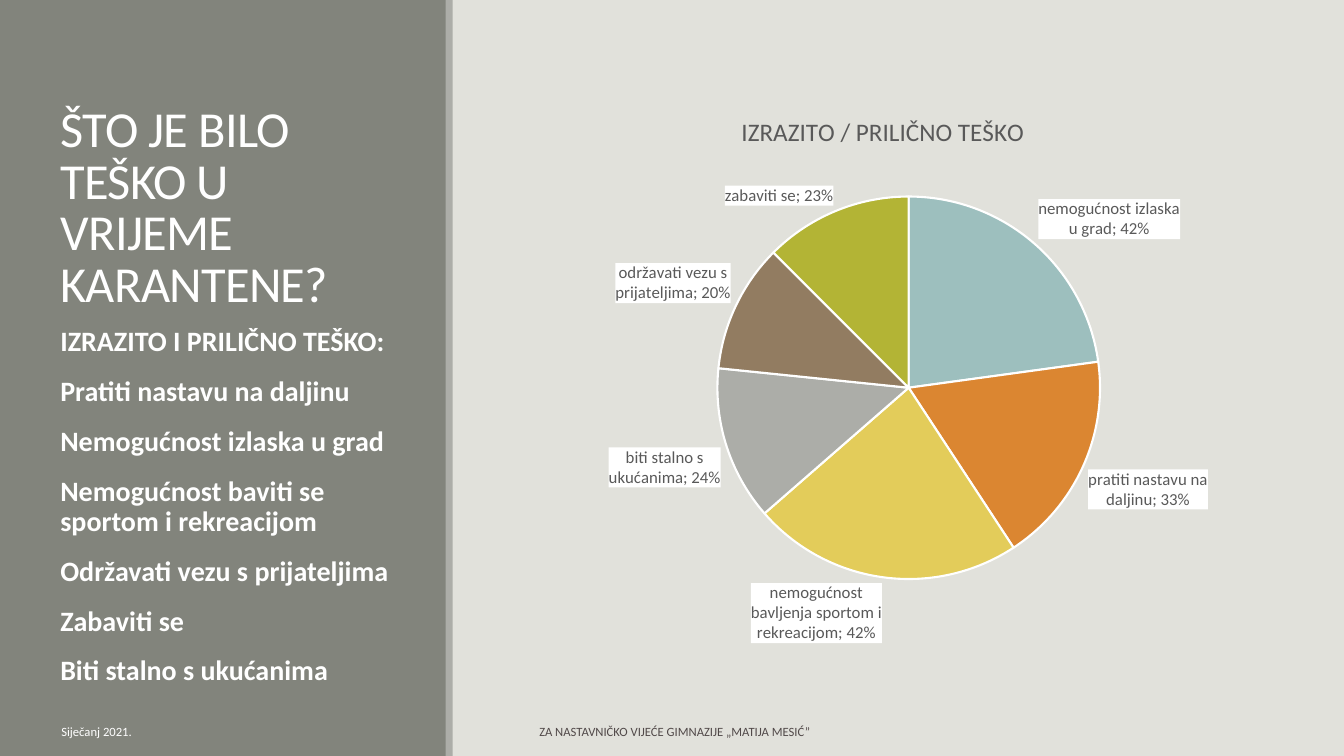
from dataclasses import dataclass

from lxml import etree
from pptx import Presentation
from pptx.chart.data import CategoryChartData
from pptx.dml.color import RGBColor
from pptx.enum import chart as ch, shapes, text
from pptx.oxml import ns
from pptx.util import Inches, Pt


@dataclass(frozen=True)
class Theme:
    font: str = "Calibri"
    back: str = "E1E1DB"
    panel: str = "82847C"
    strip: str = "ACADA8"
    white: str = "FFFFFF"
    label: str = "595959"
    foot: str = "514949"
    slices: tuple = ("9DBFBE", "DB8631", "E3CC5A", "ACADA8", "927C61", "B3B435")
    head: int = 36
    body: int = 20
    name: int = 18
    tag: int = 12
    note: int = 9


THEME = Theme()
TITLE = "ŠTO JE BILO TEŠKO U VRIJEME KARANTENE?"
POINTS = [
    "IZRAZITO I PRILIČNO TEŠKO:",
    "Pratiti nastavu na daljinu",
    "Nemogućnost izlaska u grad",
    "Nemogućnost baviti se sportom i rekreacijom",
    "Održavati vezu s prijateljima",
    "Zabaviti se",
    "Biti stalno s ukućanima",
]
SHARES = {
    "nemogućnost izlaska u grad": 0.42,
    "pratiti nastavu na daljinu": 0.33,
    "nemogućnost bavljenja sportom i rekreacijom": 0.42,
    "biti stalno s ukućanima": 0.24,
    "održavati vezu s prijateljima": 0.2,
    "zabaviti se": 0.23,
}


def rgb(code):
    return RGBColor.from_string(code)


def style(font, size, color, bold=False):
    font.name, font.size, font.bold = THEME.font, Pt(size), bold
    font.color.rgb = rgb(color)


def write(frame, lines, size, color, bold=False, anchor=text.MSO_ANCHOR.TOP):
    frame.word_wrap = True
    frame.auto_size = text.MSO_AUTO_SIZE.NONE
    frame.vertical_anchor = anchor
    frame.text = "\n".join(lines)
    for para in frame.paragraphs:
        para.alignment = text.PP_ALIGN.LEFT
        style(para.runs[0].font, size, color, bold)


def add_bar(slide, box, color):
    bar = slide.shapes.add_shape(shapes.MSO_SHAPE.RECTANGLE, *map(Inches, box))
    bar.shadow.inherit = False
    bar.fill.solid()
    bar.fill.fore_color.rgb = rgb(color)
    bar.line.fill.background()


def add_panel(slide, left, top, width, height):
    """Side panel with its edge strip, the title and the list."""
    add_bar(slide, (left, top, width, height), THEME.panel)
    add_bar(slide, (left + width - 0.01, top, 0.07, height), THEME.strip)

    title = slide.shapes.title
    title.left, title.top = Inches(left + 0.5), Inches(top + 0.65)
    title.width, title.height = Inches(3.5), Inches(2.5)
    write(title.text_frame, [TITLE], THEME.head, THEME.white,
          anchor=text.MSO_ANCHOR.BOTTOM)
    para = title.text_frame.paragraphs[0]
    para.line_spacing = 0.85
    para.runs[0].font._element.set("spc", "-50")

    body = slide.shapes.add_textbox(Inches(left + 0.5), Inches(top + 3.2),
                                    Inches(3.5), Inches(3.7))
    write(body.text_frame, POINTS, THEME.body, THEME.white, bold=True)
    for para in body.text_frame.paragraphs:
        para.line_spacing = 0.9
        para.space_before, para.space_after = Pt(12), Pt(2)


def place(part, before, **sizes):
    """Fix a chart part at fractions of the chart area."""
    for old in part.findall(ns.qn("c:layout")):
        part.remove(old)
    layout = etree.Element(ns.qn("c:layout"))
    manual = etree.SubElement(layout, ns.qn("c:manualLayout"))
    if "w" in sizes:
        etree.SubElement(manual, ns.qn("c:layoutTarget")).set("val", "inner")
    for key in "xy":
        etree.SubElement(manual, ns.qn(f"c:{key}Mode")).set("val", "edge")
    for key, size in sizes.items():
        etree.SubElement(manual, ns.qn(f"c:{key}")).set("val", str(size))
    part.find(ns.qn(before)).addprevious(layout)


def add_tags(series):
    tags = series.data_labels
    tags.show_value = tags.show_category_name = True
    tags.number_format, tags.number_format_is_linked = "0%", False
    tags.position = ch.XL_LABEL_POSITION.OUTSIDE_END
    style(tags.font, THEME.tag, THEME.label)
    root = tags._element
    shape = etree.Element(ns.qn("c:spPr"))
    fill = etree.SubElement(shape, ns.qn("a:solidFill"))
    etree.SubElement(fill, ns.qn("a:srgbClr")).set("val", THEME.white)
    root.find(ns.qn("c:txPr")).addprevious(shape)
    mark = etree.Element(ns.qn("c:separator"))
    mark.text = "; "
    root.find(ns.qn("c:showBubbleSize")).addnext(mark)


def add_pie(slide, left, top, width, height):
    data = CategoryChartData(number_format="0%")
    data.categories = list(SHARES)
    data.add_series("Series 1", list(SHARES.values()))
    chart = slide.shapes.add_chart(
        ch.XL_CHART_TYPE.PIE, Inches(left), Inches(top),
        Inches(width), Inches(height), data).chart
    style(chart.font, THEME.tag, THEME.label)
    chart.has_legend = False
    chart.has_title = True
    frame = chart.chart_title.text_frame
    frame.text = "IZRAZITO / PRILIČNO TEŠKO"
    style(frame.paragraphs[0].runs[0].font, THEME.name, THEME.label)

    plot = chart.plots[0]
    plot.vary_by_categories = True
    series = plot.series[0]
    for i, color in enumerate(THEME.slices):
        look = series.points[i].format
        look.fill.solid()
        look.fill.fore_color.rgb = rgb(color)
        look.line.color.rgb = rgb(THEME.white)
        look.line.width = Pt(1.5)
    add_tags(series)

    place(chart.chart_title._element, "c:overlay", x=0.29, y=0.05)
    area = chart._chartSpace.find(".//" + ns.qn("c:plotArea"))
    place(area, "c:pieChart", x=0.26, y=0.2, w=0.54, h=0.66)


def add_foot(slide, left, top, width, height, line, color):
    foot = slide.shapes.add_textbox(*map(Inches, (left, top, width, height)))
    write(foot.text_frame, [line], THEME.note, color,
          anchor=text.MSO_ANCHOR.MIDDLE)


def main():
    deck = Presentation()
    deck.slide_width, deck.slide_height = Inches(13.33), Inches(7.5)
    slide = deck.slides.add_slide(deck.slide_layouts[5])
    slide.background.fill.solid()
    slide.background.fill.fore_color.rgb = rgb(THEME.back)

    add_panel(slide, 0, 0, 4.43, 7.5)
    # The title comes first in the layout; bring it above the panel.
    slide.shapes._spTree.append(slide.shapes.title._element)
    add_pie(slide, 5.25, 0.8, 7.1, 5.75)
    add_foot(slide, 0.51, 7.06, 2.86, 0.4, "Siječanj 2021.", THEME.white)
    add_foot(slide, 5.25, 7.06, 5.08, 0.4,
             "ZA NASTAVNIČKO VIJEĆE GIMNAZIJE „MATIJA MESIĆ”", THEME.foot)
    deck.save("out.pptx")


if __name__ == "__main__":
    main()
